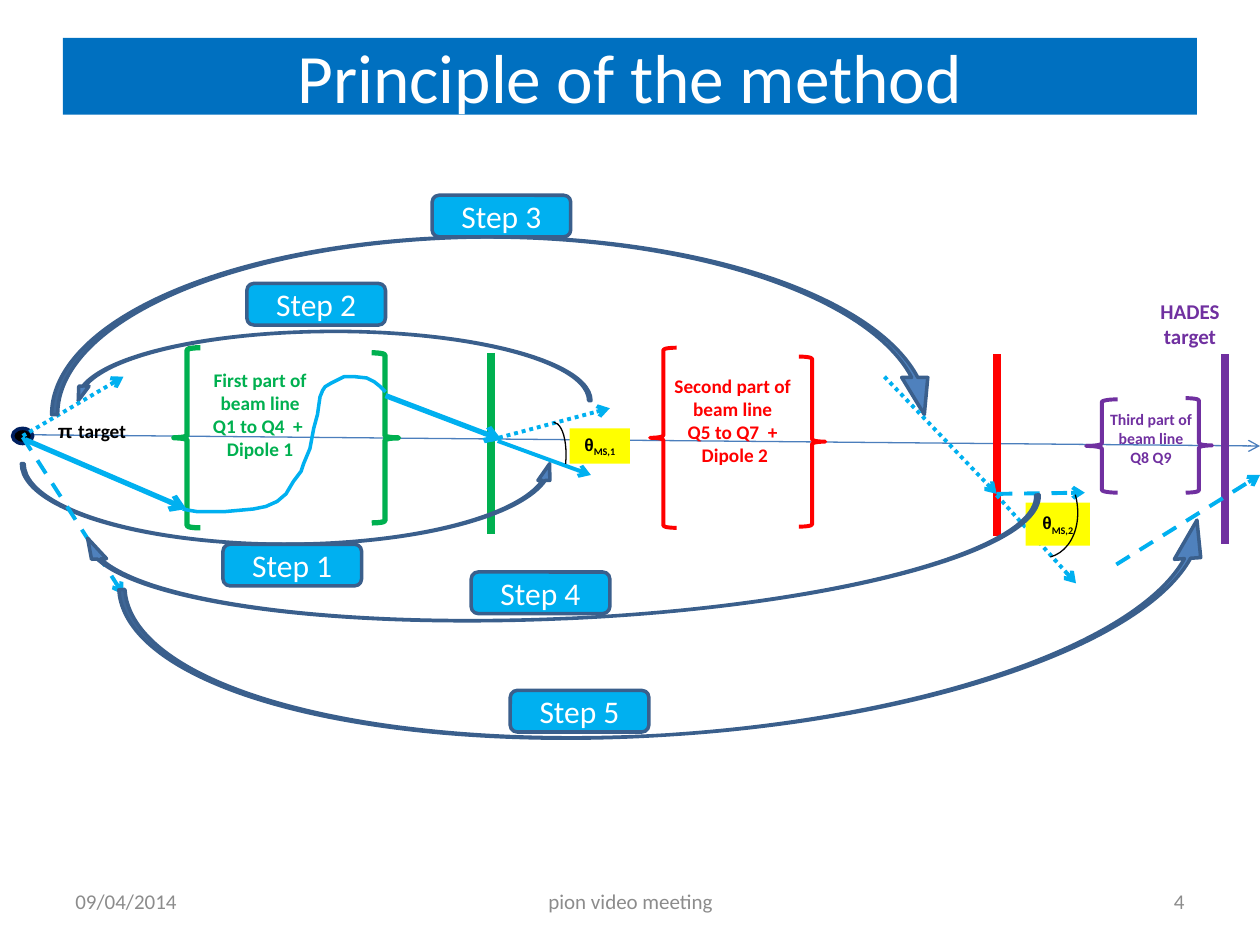
from lxml import etree
from pptx import Presentation
from pptx import util as u
from pptx.dml.color import RGBColor
from pptx.enum import dml, shapes, text
from pptx.oxml.ns import qn

PX = 9144  # 100 px to the inch
HUE = {"bar": "0070C0", "white": "FFFFFF", "gray": "8C8C8C", "axis": "4B7EBC",
       "green": "00B050", "red": "FF0000", "violet": "7030A0", "sky": "00B0F0",
       "black": "000000", "navy": "002060", "steel": "4F81BD", "edge": "3A5F8C",
       "yellow": "FFFF00"}
KIND = shapes.MSO_SHAPE
SIDE = text.PP_ALIGN
DOT, DASH = dml.MSO_LINE.ROUND_DOT, dml.MSO_LINE.DASH

deck = Presentation()
deck.slide_width, deck.slide_height = 1000 * PX, 750 * PX
page = deck.slides.add_slide(deck.slide_layouts[6]).shapes


def rgb(name):
    return RGBColor.from_string(HUE[name])


def move(box, x, y):
    return (box[0] + x, box[1] + y, *box[2:])


def write(shape, *paras, size=11, hue="black", bold=False, side=SIDE.CENTER):
    """Each paragraph is a string or a list of (string, font, baseline) runs."""
    frame = shape.text_frame
    frame.word_wrap = True
    frame.vertical_anchor = text.MSO_ANCHOR.MIDDLE
    for i, para in enumerate(paras):
        line = frame.add_paragraph() if i else frame.paragraphs[0]
        line.alignment = side
        runs = [(para, "Calibri", 0)] if isinstance(para, str) else para
        for words, face, base in runs:
            run = line.add_run()
            run.text = words
            font = run.font
            font.name, font.size, font.bold = face, u.Pt(size), bold
            font.color.rgb = rgb(hue)
            if base:
                run._r.get_or_add_rPr().set("baseline", str(base * 1000))


def label(box, *paras, **form):
    write(page.add_textbox(*(n * PX for n in box)), *paras, **form)


def style(shape, fill, line, wide):
    shape.shadow.inherit = False
    if fill:
        shape.fill.solid()
        shape.fill.fore_color.rgb = rgb(fill)
    else:
        shape.fill.background()
    if line:
        shape.line.color.rgb = rgb(line)
        shape.line.width = u.Pt(wide)
    else:
        shape.line.fill.background()


def draw(kind, box, fill=None, line=None, wide=2, turn=0, flip=None):
    shape = page.add_shape(kind, *(n * PX for n in box))
    style(shape, fill, line, wide)
    shape.rotation = turn
    if flip:
        shape._element.spPr.find(qn("a:xfrm")).set(flip, "1")
    return shape


def ray(x1, y1, x2, y2, hue="sky", wide=2.25, dash=None, tip=True):
    line = page.add_connector(shapes.MSO_CONNECTOR.STRAIGHT,
                              *(n * PX for n in (x1, y1, x2, y2)))
    line.line.color.rgb = rgb(hue)
    line.line.width = u.Pt(wide)
    if dash:
        line.line.dash_style = dash
    if tip:
        etree.SubElement(line.line._get_or_add_ln(), qn("a:tailEnd"), type="arrow")
    etree.SubElement(line._element.spPr, qn("a:effectLst"))


def head(box):
    write(draw(KIND.RECTANGLE, box, "bar"), "Principle of the method",
          size=39.6, hue="white")


def foot(x, y, h):
    for dx, w, words, side in ((0, 233, "09/04/2014", SIDE.LEFT),
                               (292, 317, "pion video meeting", SIDE.CENTER),
                               (667, 233, "4", SIDE.RIGHT)):
        label((x + dx, y, w, h), words, size=12, hue="gray", side=side)


def stage(x, y, left, right, words, lines, hue, wide=2.25, size=11):
    """Part of the beam line: a pair of braces around its name."""
    for box, turn in ((left, 0), (right, 180)):
        draw(KIND.LEFT_BRACE, move(box, x, y), line=hue, wide=wide, turn=turn)
    label(move(words, x, y), *lines, size=size, hue=hue, bold=True)


def plane(x, y, h, hue):
    ray(x, y, x, y + h, hue, 4.5, tip=False)


def source(x, y):
    draw(KIND.OVAL, (x, y, 16, 12), "black", "navy")
    label((x + 22, y - 10, 82, 24), [("π ", "Arial", 0), ("target", "Calibri", 0)],
          bold=True)


def angle(box, num):
    write(draw(KIND.RECTANGLE, box, "yellow"),
          [("θ", "Arial", 0), (f"MS,{num}", "Calibri", -25)], size=10, bold=True)


def arc(box, turn):
    draw(KIND.ARC, box, line="black", wide=0.75, turn=turn)


def step(box, num, dx, dy, turn=0, flip=None):
    """Curved arrow, with its tag at dx, dy from the corner of the box."""
    arrow = draw(KIND.CURVED_UP_ARROW, box, "steel", "edge", turn=turn, flip=flip)
    for i, part in enumerate((0.034, 0.147, 0.209)):
        arrow.adjustments[i] = part
    tag = draw(KIND.ROUNDED_RECTANGLE, (box[0] + dx, box[1] + dy, 110, 33),
               "sky", "edge")
    write(tag, f"Step {num}", size=18, hue="white")


def track(x, y):
    """Bent path of the beam through the first part."""
    spots = [(5, 1), (11, 2), (34, 2), (56, 0), (66, -2), (75, -6), (82, -12),
             (88, -22), (94, -30), (96, -36), (101, -48), (104, -64), (107, -75),
             (108, -82), (109, -89), (111, -94), (113, -97), (118, -100),
             (122, -102), (128, -105), (137, -105), (146, -104), (152, -101),
             (157, -97), (160, -94), (161, -93)]
    pen = page.build_freeform(x, y, scale=PX)
    pen.add_line_segments([(x + dx, y + dy) for dx, dy in spots], close=False)
    style(pen.convert_to_shape(), None, "sky", 2)


def first(x, y):
    """Rays from the source to the first detector plane."""
    ray(x, y, x + 128, y + 55, wide=3)
    ray(x + 286, y - 35, x + 378, y, wide=3)
    ray(x + 370, y, x + 464, y - 25, dash=DOT)
    ray(x + 375, y + 1, x + 449, y + 28)
    arc((x + 404, y - 14, 25, 64), 5.3)
    angle((x + 432, y - 9, 48, 28), 1)
    track(x + 125, y + 55)


def second(x, y):
    """Rays around the second detector plane."""
    ray(x - 89, y - 93, x, y, dash=DOT)
    ray(x, y + 1, x + 63, y + 71, dash=DOT)
    ray(x, y, x + 70, y - 1, dash=DASH)
    angle((x + 23, y + 7, 51, 34), 2)


def main():
    head((50, 30, 900, 61))
    foot(50, 695, 40)
    ray(20, 345, 1000, 354, "axis", 0.75)
    stage(138, 276, (0, 0, 21, 143), (157, 4, 21, 135), (8, 6, 121, 94),
          ("First part of beam line", "Q1 to Q4  + ", "Dipole 1"), "green", 3)
    stage(516, 276, (0, 0, 21, 143), (118, 7, 21, 135), (8, 18, 115, 79),
          ("Second part of beam line", "Q5 to Q7  +", " Dipole 2"), "red")
    plane(390, 280, 144, "green")
    plane(791, 281, 144, "red")
    source(10, 340)
    step((17, 368, 424, 64), 1, 160, 64)
    first(20, 349)
    step((58, 263, 411, 55), 2, 138, -38, 180)
    ray(18, 346, 98, 299, dash=DOT)
    step((41, 188, 703, 141), 3, 302, -33, 180, "flipH")
    second(791, 392)
    ray(18, 347, 98, 472, dash=DASH)
    step((65, 410, 762, 81), 4, 309, 44, 177.4, "flipV")
    step((98, 440, 868, 143), 5, 307, 108, 356.3)
    plane(972, 281, 151, "violet")
    label((901, 237, 87, 39), "HADES target", size=12, hue="violet", bold=True)
    ray(886, 448, 1000, 377, dash=DASH)
    stage(862, 316, (0, 1, 25, 74), (79, 0, 21, 75), (4, 4, 95, 55),
          ("Third part of beam line", "Q8 Q9"), "violet", size=9)
    arc((780, 369, 85, 64), 74.8)
    deck.save("out.pptx")


if __name__ == "__main__":
    main()
